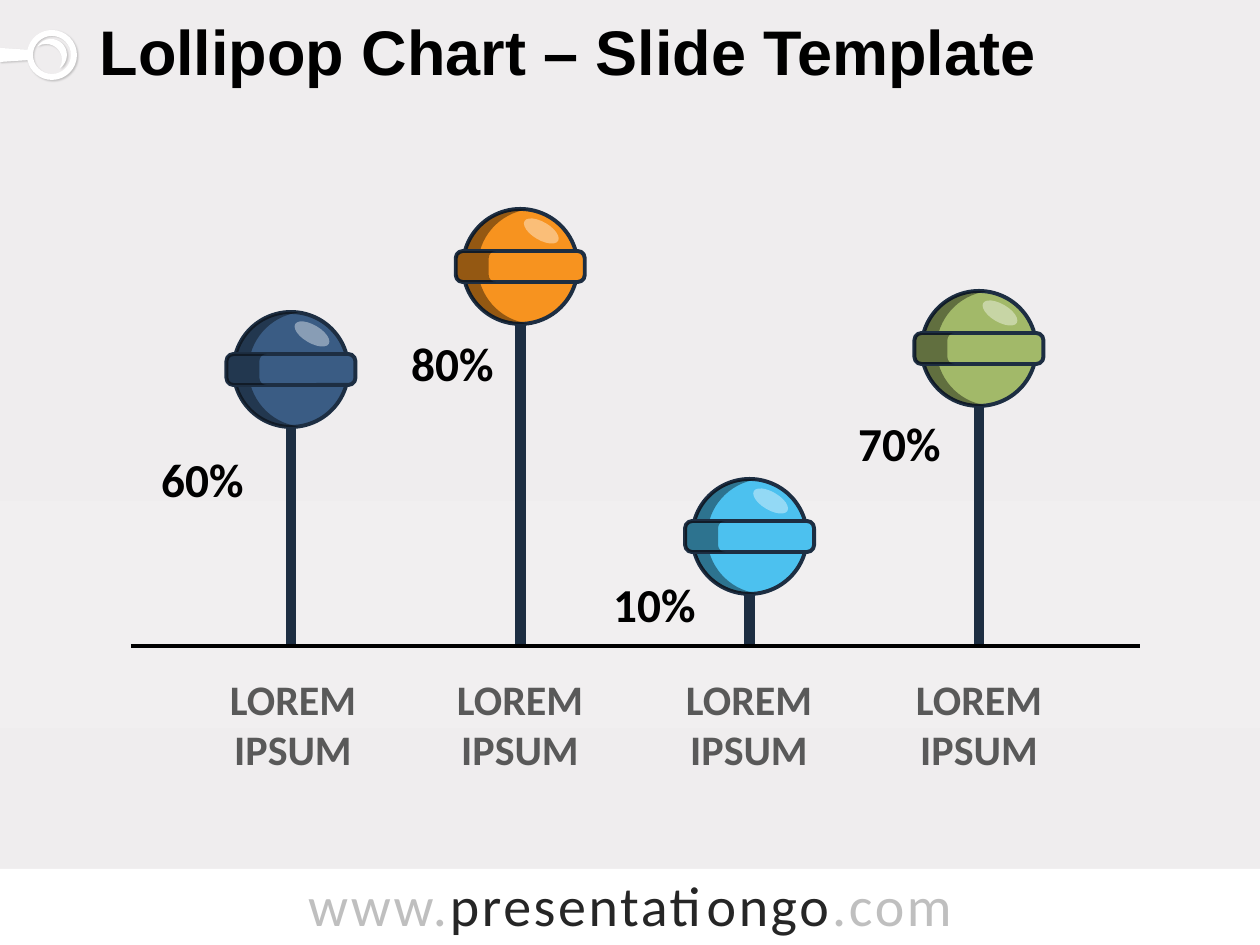
from dataclasses import dataclass
from math import acos, ceil, cos, floor, pi, radians, sin, tan

from lxml import etree
from pptx import Presentation
from pptx.dml.color import RGBColor
from pptx.enum.shapes import MSO_CONNECTOR, MSO_SHAPE
from pptx.enum.text import MSO_ANCHOR, MSO_AUTO_SIZE, PP_ALIGN
from pptx.oxml.ns import qn
from pptx.util import Emu, Pt

STRAIGHT = MSO_CONNECTOR.STRAIGHT
RECTANGLE, ROUNDED, OVAL = MSO_SHAPE.RECTANGLE, MSO_SHAPE.ROUNDED_RECTANGLE, MSO_SHAPE.OVAL
TOP, MIDDLE = MSO_ANCHOR.TOP, MSO_ANCHOR.MIDDLE
LEFT, CENTER, RIGHT = PP_ALIGN.LEFT, PP_ALIGN.CENTER, PP_ALIGN.RIGHT
FIT_NONE, FIT_SHAPE = MSO_AUTO_SIZE.NONE, MSO_AUTO_SIZE.SHAPE_TO_FIT_TEXT
TITLE_ONLY = 5


@dataclass(frozen=True)
class Theme:
    heading_font: str = "Arial"
    body_font: str = "Calibri"
    title_size: int = 36
    address_size: int = 32
    label_size: int = 24
    value_size: int = 27
    black: str = "000000"
    white: str = "FFFFFF"
    label: str = "595959"
    address_pale: str = "BFBFBF"
    address_dark: str = "262626"
    outline: str = "1D2E42"
    ornament_shadow: str = "808080"
    outline_width: float = 2.25
    stem_width: float = 6
    overlay_alpha: int = 40
    background: tuple = ((0, "EFEDEE"), (53, "F1EFF0"), (77, "EFEDEE"), (100, "EFEBEC"))


THEME = Theme()
SLIDE_W, SLIDE_H = 1260, 945
BASELINE = 646
FIRST_X, LAST_X = 291, 979
HEAD = 115
BAND_W, BAND_H, BAND_DROP, BAND_CORNER, BAND_SHADE = 129, 31, 42, 7, 33

# value, label, candy colour, top of the candy, left of the label, left and top of the value
LOLLIPOPS = [
    ("60%", "LOREM IPSUM", "3A5C84", 312, 200, 148, 444),
    ("80%", "LOREM IPSUM", "F7931F", 209, 427, 398, 328),
    ("10%", "LOREM IPSUM", "4CC1EF", 479, 656, 600, 569),
    ("70%", "LOREM IPSUM", "A2B969", 291, 886, 845, 408),
]
ADDRESS = [("www.", THEME.address_pale), ("presentationgo", THEME.address_dark),
           (".com", THEME.address_pale)]


def px(length):
    return Emu(round(length * 914400 / 126))


def arc(cx, cy, radius, start, end):
    """Start point, then Bezier segments split at quadrants; angles run clockwise from the right."""
    low, high = min(start, end), max(start, end)
    quarter = pi / 2
    inside = [n * quarter for n in range(floor(low / quarter), ceil(high / quarter) + 1)
              if low + 0.001 < n * quarter < high - 0.001]
    stops = sorted([low, *inside, high], reverse=start > end)

    def point(angle, handle=0):
        return (cx + radius * (cos(angle) - handle * sin(angle)),
                cy + radius * (sin(angle) + handle * cos(angle)))

    segments = [[point(start)]]
    for a, b in zip(stops, stops[1:]):
        handle = 4 / 3 * tan((b - a) / 4)
        segments.append([point(a, handle), point(b, -handle), point(b)])
    return segments


def crescent(cx, cy, radius, shift, direction=0):
    """What is left of a disc once the same disc, moved by shift, is cut away."""
    meet = acos(shift / 2 / radius)
    outer = arc(cx, cy, radius, direction + meet, direction + 2 * pi - meet)
    inner = arc(cx + shift * cos(direction), cy + shift * sin(direction), radius,
                direction + pi + meet, direction + pi - meet)
    return outer + inner[1:]


def band_shade(left, top):
    """The rounded left end of the band, repeated as its right edge."""
    r = BAND_CORNER
    x, upper, lower = left + r, top + r, top + BAND_H - r
    return (arc(x, upper, r, 1.5 * pi, pi) + arc(x, lower, r, pi, pi / 2)
            + arc(x + BAND_SHADE, lower, r, pi / 2, pi)
            + arc(x + BAND_SHADE, upper, r, pi, 1.5 * pi))


def paint(shape, color, alpha=None, outline=None):
    shape.shadow.inherit = False
    shape.fill.solid()
    shape.fill.fore_color.rgb = RGBColor.from_string(color)
    if alpha is not None:
        solid = shape._element.spPr.find(qn("a:solidFill"))
        etree.SubElement(solid[0], qn("a:alpha"), val=str(alpha * 1000))
    if outline:
        shape.line.color.rgb = RGBColor.from_string(outline)
        shape.line.width = Pt(THEME.outline_width)
    else:
        shape.line.fill.background()


def add_preset(shapes, preset, left, top, width, height, color, **look):
    shape = shapes.add_shape(preset, px(left), px(top), px(width), px(height))
    paint(shape, color, **look)
    return shape


def add_outline(shapes, contours, color, alpha=None):
    """Freeform from segments: one point is a straight line, three are a Bezier curve."""
    builder = None
    for contour in contours:
        start, *points = [(px(x), px(y)) for segment in contour for x, y in segment]
        if builder:
            builder.move_to(*start)
        else:
            builder = shapes.build_freeform(*start)
        builder.add_line_segments(points)
    shape = builder.convert_to_shape()
    lines = iter(shape._element.spPr.findall(".//" + qn("a:lnTo")))
    for segment in (segment for contour in contours for segment in contour[1:]):
        steps = [next(lines) for _ in segment]
        if len(steps) == 3:
            curve = etree.Element(qn("a:cubicBezTo"))
            steps[0].addprevious(curve)
            for step in steps:
                curve.append(step[0])
                step.getparent().remove(step)
    paint(shape, color, alpha)
    return shape


def add_line(shapes, x1, y1, x2, y2, color, width):
    line = shapes.add_connector(STRAIGHT, px(x1), px(y1), px(x2), px(y2))
    line.line.color.rgb = RGBColor.from_string(color)
    line.line.width = Pt(width)
    etree.SubElement(line._element.spPr, qn("a:effectLst"))


def write(frame, text, font, size, color, align):
    frame.text = text
    paragraph = frame.paragraphs[0]
    paragraph.alignment = align
    paragraph.font.name = font
    paragraph.font.size = Pt(size)
    paragraph.font.bold = True
    paragraph.font.color.rgb = RGBColor.from_string(color)
    return paragraph


def add_text(shapes, left, top, width, height, text, size, color, align, wrap):
    frame = shapes.add_textbox(px(left), px(top), px(width), px(height)).text_frame
    frame.word_wrap = wrap
    frame.auto_size = FIT_SHAPE
    write(frame, text, THEME.body_font, size, color, align)


def set_background(slide):
    fill = slide.background.fill
    fill.gradient()
    fill.gradient_angle = 270
    stops = slide.background._cSld.find(".//" + qn("a:gsLst"))
    for stop in list(stops):
        stops.remove(stop)
    for position, color in THEME.background:
        stop = etree.SubElement(stops, qn("a:gs"), pos=str(position * 1000))
        etree.SubElement(stop, qn("a:srgbClr"), val=color)


def set_title(title, text):
    title.left, title.top, title.width, title.height = px(87), px(15), px(1086), px(102)
    frame = title.text_frame
    frame.auto_size = FIT_NONE
    frame.vertical_anchor = TOP
    frame.margin_right = 0
    write(frame, text, THEME.heading_font, THEME.title_size, THEME.black, LEFT).line_spacing = 0.9


def add_footer(shapes):
    frame = add_preset(shapes, RECTANGLE, 0, 869, SLIDE_W, SLIDE_H - 869, THEME.white).text_frame
    frame.vertical_anchor = MIDDLE
    frame.margin_bottom = frame.margin_left
    paragraph = frame.paragraphs[0]
    paragraph.alignment = CENTER
    paragraph.font.name = THEME.body_font
    paragraph.font.size = Pt(THEME.address_size)
    for text, color in ADDRESS:
        run = paragraph.add_run()
        run.text = text
        run.font.color.rgb = RGBColor.from_string(color)
        run.font._element.set("spc", "150")


def add_magnifier(shapes):
    cx, cy, joint = 52, 55, radians(168)
    rim = arc(cx, cy, 25, -joint, joint) + [[(0, 62)], [(0, 48)]]
    lens = arc(cx, cy, 19, 2 * pi, 0)
    glint = crescent(cx - 1, cy, 16, 7, radians(135))
    magnifier = add_outline(shapes, [rim, lens, glint], THEME.white)
    effects = magnifier._element.spPr.find(qn("a:effectLst"))
    shadow = etree.SubElement(effects, qn("a:outerShdw"), blurRad="12700", dist="12700",
                              dir="2700000", algn="tl", rotWithShape="0")
    color = etree.SubElement(shadow, qn("a:srgbClr"), val=THEME.ornament_shadow)
    etree.SubElement(color, qn("a:alpha"), val="40000")


def add_lollipop(slide, x, top, color):
    shapes = slide.shapes.add_group_shape().shapes
    left, band_left, band_top = x - HEAD / 2, x - BAND_W / 2, top + BAND_DROP
    shade = THEME.overlay_alpha
    add_line(shapes, x, top + HEAD, x, BASELINE, THEME.outline, THEME.stem_width)
    add_preset(shapes, OVAL, left, top, HEAD, HEAD, color, outline=THEME.outline)
    add_outline(shapes, [crescent(x, top + HEAD / 2, HEAD / 2, 15)], THEME.black, shade)
    band = add_preset(shapes, ROUNDED, band_left, band_top, BAND_W, BAND_H, color,
                      outline=THEME.outline)
    band.adjustments[0] = BAND_CORNER / BAND_H
    add_outline(shapes, [band_shade(band_left, band_top)], THEME.black, shade)
    shine = add_preset(shapes, OVAL, left + 59, top + 13, 39, 18, THEME.white, alpha=shade)
    shine.rotation = 30.5


def main():
    prs = Presentation()
    prs.slide_width, prs.slide_height = px(SLIDE_W), px(SLIDE_H)
    slide = prs.slides.add_slide(prs.slide_layouts[TITLE_ONLY])
    shapes = slide.shapes
    set_background(slide)
    add_footer(shapes)
    add_magnifier(shapes)
    set_title(shapes.title, "Lollipop Chart – Slide Template")
    step = (LAST_X - FIRST_X) / (len(LOLLIPOPS) - 1)
    for i, (value, label, color, top, label_left, value_left, value_top) in enumerate(LOLLIPOPS):
        add_lollipop(slide, FIRST_X + i * step, top, color)
        add_text(shapes, label_left, 667, 186, 115, label, THEME.label_size, THEME.label,
                 CENTER, True)
        add_text(shapes, value_left, value_top, 108, 71, value, THEME.value_size,
                 THEME.black, RIGHT, False)
    add_line(shapes, 131, BASELINE, 1140, BASELINE, THEME.black, THEME.outline_width)
    prs.save("out.pptx")


if __name__ == "__main__":
    main()
